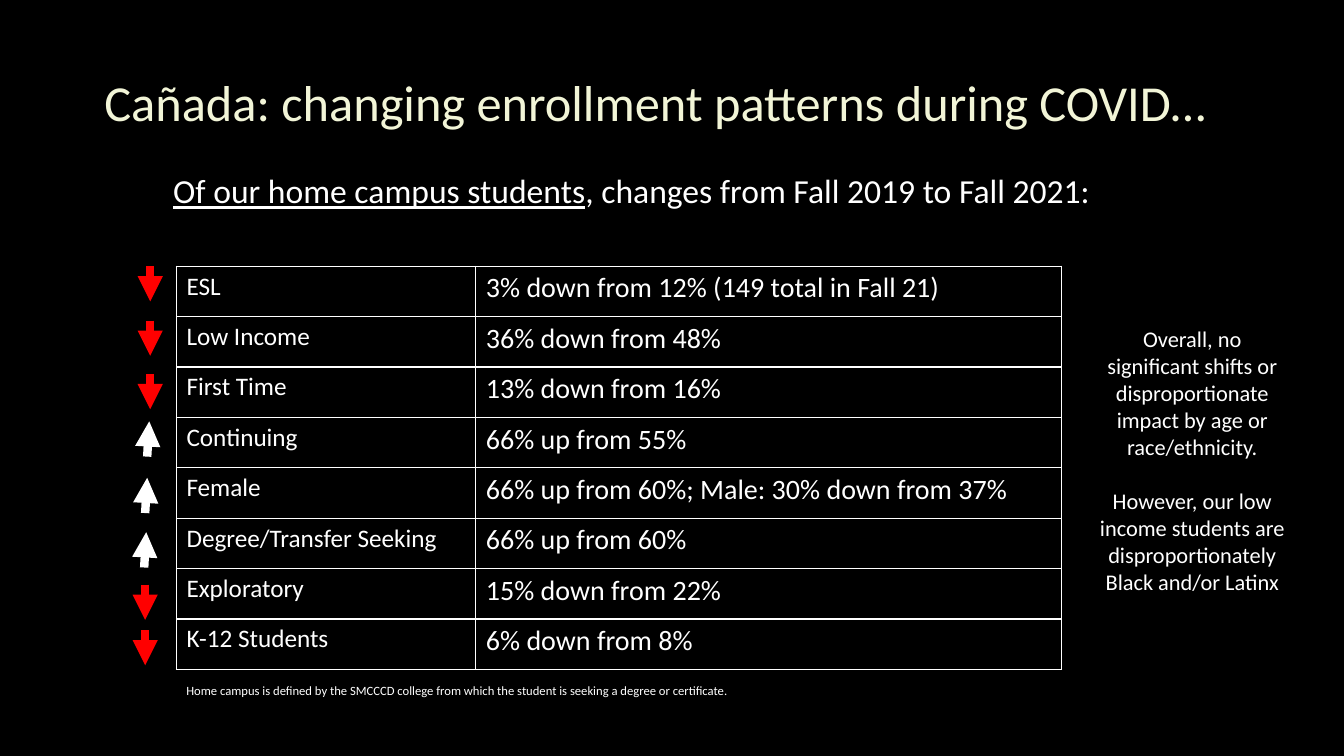
from lxml.etree import SubElement as Sub
from pptx import Presentation
from pptx.dml.color import RGBColor as Rgb
from pptx.enum.shapes import MSO_CONNECTOR as Link
from pptx.enum.text import MSO_ANCHOR as Anchor, PP_ALIGN as Align
from pptx.oxml.ns import qn
from pptx.util import Inches as In, Pt

HUES = {"back": "000000", "title": "F2F5D7", "text": "FFFFFF",
        "up": "FFFFFF", "down": "FF0000"}

# Label, change, arrow direction, arrow x and arrow top
ROWS = [
    ("ESL", "3% down from 12% (149 total in Fall 21)", "down", 1.49, 2.64),
    ("Low Income", "36% down from 48%", "down", 1.49, 3.18),
    ("First Time", "13% down from 16%", "down", 1.49, 3.71),
    ("Continuing", "66% up from 55%", "up", 1.48, 4.18),
    ("Female", "66% up from 60%; Male: 30% down from 37%", "up", 1.46, 4.74),
    ("Degree/Transfer Seeking", "66% up from 60%", "up", 1.45, 5.28),
    ("Exploratory", "15% down from 22%", "down", 1.44, 5.8),
    ("K-12 Students", "6% down from 8%", "down", 1.44, 6.25),
]
COLS = (2.97, 5.81)
LEFT, TOP, STEP = 1.75, 2.64, 0.5
REACH, LEAN = 0.35, 0.02


def write(par, text, size, hue="text", under=False):
    run = par.add_run()
    run.text = text
    run.font.name = "Calibri"
    run.font.size = Pt(size)
    run.font.underline = under
    run.font.color.rgb = Rgb.from_string(HUES[hue])


def box(left, top, width, height, align=Align.LEFT):
    frame = slide.shapes.add_textbox(
        In(left), In(top), In(width), In(height)).text_frame
    frame.word_wrap = True
    frame.paragraphs[0].alignment = align
    return frame


deck = Presentation()
deck.slide_width, deck.slide_height = In(13.33), In(7.5)
slide = deck.slides.add_slide(deck.slide_layouts[6])
back = slide.background.fill
back.solid()
back.fore_color.rgb = Rgb.from_string(HUES["back"])

# Title and lead line
title = box(0.84, 0.48, 11.32, 1.06, Align.CENTER)
title.vertical_anchor = Anchor.MIDDLE
write(title.paragraphs[0],
      "Cañada: changing enrollment patterns during COVID…", 36, "title")
lead = box(1.62, 1.64, 10.54, 0.91).paragraphs[0]
write(lead, "Of our home campus students", 24, under=True)
write(lead, ", changes from Fall 2019 to Fall 2021:", 24)

# Table of changes
table = slide.shapes.add_table(
    len(ROWS), len(COLS), In(LEFT), In(TOP),
    In(sum(COLS)), In(STEP * len(ROWS))).table
table.first_row = table.horz_banding = False
for col, width in zip(table.columns, COLS):
    col.width = In(width)
for r, row in enumerate(ROWS):
    table.rows[r].height = In(STEP)
    for c, size in enumerate((18, 20)):
        cell = table.cell(r, c)
        write(cell.text_frame.paragraphs[0], row[c], size)
        props = cell._tc.get_or_add_tcPr()
        for side in ("a:lnL", "a:lnR", "a:lnT", "a:lnB"):
            edge = Sub(props, qn(side), w=str(Pt(1)))
            Sub(Sub(edge, qn("a:solidFill")), qn("a:srgbClr"),
                val=HUES["text"])
        cell.fill.background()

# Arrows beside the rows, the upward ones leaning slightly right
for _, _, way, x, top in ROWS:
    start, end = (x, top), (x, top + REACH)
    if way == "up":
        start, end = (x - LEAN, top + REACH), (x, top)
    arrow = slide.shapes.add_connector(
        Link.STRAIGHT, *(In(n) for n in start + end))
    arrow.line.width = Pt(6)
    arrow.line.color.rgb = Rgb.from_string(HUES[way])
    Sub(arrow.line._get_or_add_ln(), qn("a:tailEnd"), type="triangle")
    Sub(arrow._element.spPr, qn("a:effectLst"))

# Side remark
side = box(10.8, 3.18, 2.05, 2.79, Align.CENTER)
write(side.paragraphs[0], "Overall, no significant shifts or "
      "disproportionate impact by age or race/ethnicity.", 16)
low = side.add_paragraph()
low.alignment = Align.CENTER
low.space_before = Pt(19.5)
write(low, "However, our low income students are "
      "disproportionately Black and/or Latinx", 16)

# Footnote
note = box(1.75, 6.73, 6.12, 0.56).paragraphs[0]
write(note, "Home campus is defined by the SMCCCD college from which "
      "the student is seeking a degree or certificate.", 9)

deck.save("out.pptx")
